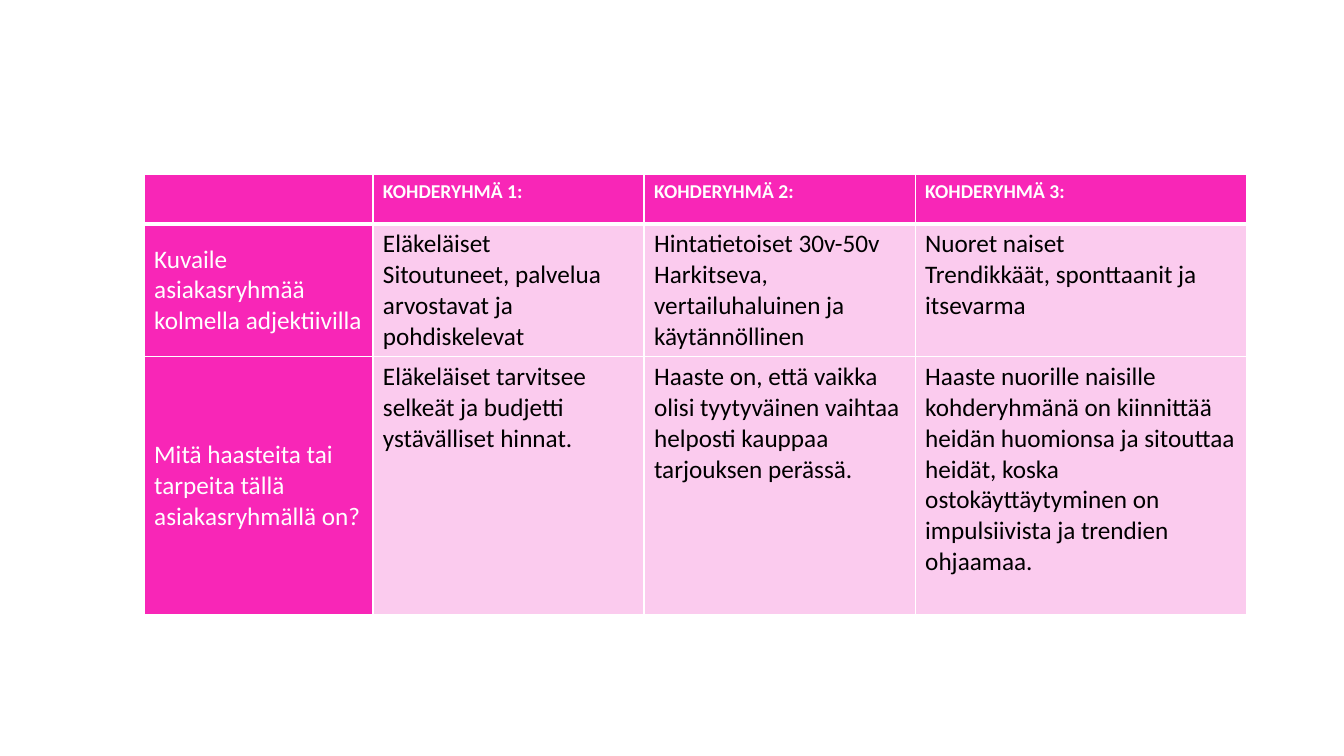
from dataclasses import dataclass

from lxml.etree import SubElement
from pptx import Presentation
from pptx.dml.color import RGBColor
from pptx.enum.text import MSO_ANCHOR
from pptx.oxml.ns import qn
from pptx.util import Pt


@dataclass(frozen=True)
class Theme:
    """Colours, type and line widths of the slide."""
    accent: str = "F826B7"
    tint: str = "FBCBEE"
    light: str = "FFFFFF"
    dark: str = "000000"
    font: str = "Calibri"
    header_size: float = 14
    body_size: float = 18
    thin: float = 1
    thick: float = 3


THEME = Theme()
SLIDE_SIZE = (960, 540)
TABLE_BOX = (102.96, 124.56, 787.68, 313.2)
COLUMN_WIDTHS = (163.44, 193.68, 193.68, 236.88)
ROW_HEIGHTS = (35.28, 93.6, 184.32)
TARGET_GROUPS = (
    ("", "KOHDERYHMÄ 1:", "KOHDERYHMÄ 2:", "KOHDERYHMÄ 3:"),
    (
        "Kuvaile asiakasryhmää kolmella adjektiivilla",
        "Eläkeläiset\nSitoutuneet, palvelua arvostavat ja pohdiskelevat",
        "Hintatietoiset 30v-50v\nHarkitseva, vertailuhaluinen ja käytännöllinen",
        "Nuoret naiset\nTrendikkäät, sponttaanit ja itsevarma",
    ),
    (
        "Mitä haasteita tai tarpeita tällä asiakasryhmällä on?",
        "Eläkeläiset tarvitsee selkeät ja budjetti ystävälliset hinnat.",
        "Haaste on, että vaikka olisi tyytyväinen vaihtaa helposti kauppaa "
        "tarjouksen perässä.",
        "Haaste nuorille naisille kohderyhmänä on kiinnittää heidän huomionsa "
        "ja sitouttaa heidät, koska ostokäyttäytyminen on impulsiivista ja "
        "trendien ohjaamaa.",
    ),
)


def draw_borders(cell, widths):
    """Give the four sides of a cell light lines of the given widths."""
    properties = cell._tc.get_or_add_tcPr()
    for side, width in widths.items():
        line = SubElement(properties, qn(f"a:ln{side}"), w=str(Pt(width)))
        paint = SubElement(line, qn("a:solidFill"))
        SubElement(paint, qn("a:srgbClr"), val=THEME.light)


def format_cell(cell, text, row, column):
    """Write and style one cell by its place in the grid."""
    is_header, is_label = row == 0, column == 0
    on_accent = is_header or is_label
    draw_borders(cell, {
        "L": THEME.thin,
        "R": THEME.thin,
        "T": THEME.thick if row == 1 else THEME.thin,
        "B": THEME.thick if is_header else THEME.thin,
    })
    cell.fill.solid()
    cell.fill.fore_color.rgb = RGBColor.from_string(
        THEME.accent if on_accent else THEME.tint)
    cell.vertical_anchor = (
        MSO_ANCHOR.MIDDLE if is_label and not is_header else MSO_ANCHOR.TOP)
    cell.text = text
    font_format = {
        "name": THEME.font,
        "size": Pt(THEME.header_size if is_header else THEME.body_size),
        "bold": is_header,
    }
    for paragraph in cell.text_frame.paragraphs:
        for run in paragraph.runs:
            for attribute, value in font_format.items():
                setattr(run.font, attribute, value)
            run.font.color.rgb = RGBColor.from_string(
                THEME.light if on_accent else THEME.dark)


def add_target_groups(slide, box):
    """Place the target group table in the box."""
    left, top, width, height = box
    groups = slide.shapes.add_table(
        len(ROW_HEIGHTS), len(COLUMN_WIDTHS),
        Pt(left), Pt(top), Pt(width), Pt(height)).table
    groups.horz_banding = False
    for column, share in zip(groups.columns, COLUMN_WIDTHS):
        column.width = Pt(width * share / sum(COLUMN_WIDTHS))
    for row, share in zip(groups.rows, ROW_HEIGHTS):
        row.height = Pt(height * share / sum(ROW_HEIGHTS))
    for row, texts in enumerate(TARGET_GROUPS):
        for column, text in enumerate(texts):
            format_cell(groups.cell(row, column), text, row, column)


def main():
    """Build and save the presentation."""
    presentation = Presentation()
    presentation.slide_width, presentation.slide_height = map(Pt, SLIDE_SIZE)
    slide = presentation.slides.add_slide(presentation.slide_layouts[6])
    add_target_groups(slide, TABLE_BOX)
    presentation.save("out.pptx")


if __name__ == "__main__":
    main()
